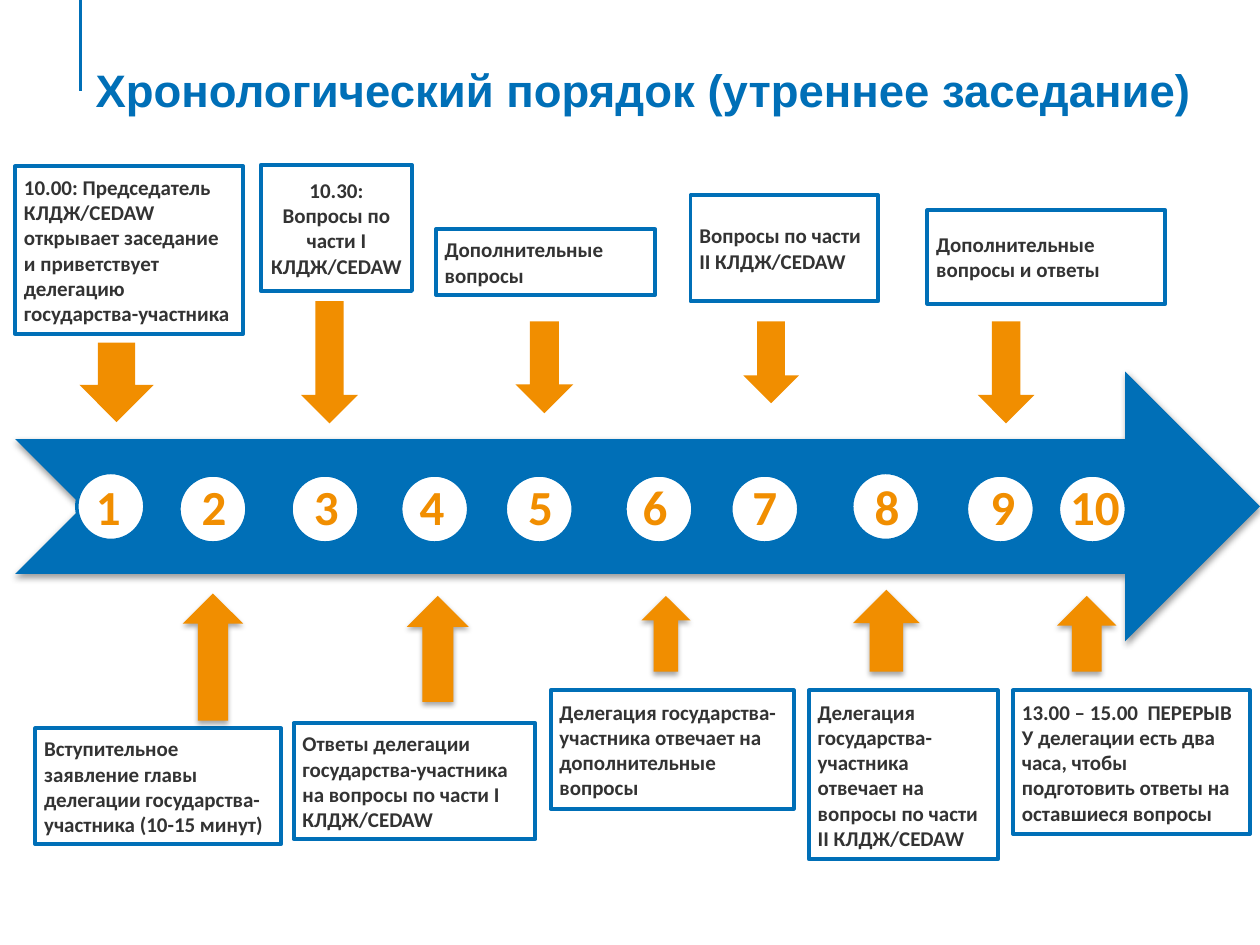
from dataclasses import dataclass

from lxml import etree
from pptx import Presentation
from pptx import util as u
from pptx.dml.color import RGBColor
from pptx.enum import shapes, text
from pptx.oxml import ns


@dataclass(frozen=True)
class Theme:
    """Colours, fonts and type sizes of the slide."""
    blue: str = "006FB7"
    orange: str = "F18E00"
    white: str = "FFFFFF"
    ink: str = "333333"
    head_font: str = "Arial"
    body_font: str = "Calibri"
    title: int = 26
    number: int = 28
    body: int = 12


@dataclass(frozen=True)
class Step:
    """One numbered step: circle, number, arrow, framed note and its words."""
    circle: tuple
    number_x: float
    arrow: tuple
    frame: tuple
    words: tuple
    centred: bool = False


T = Theme()
MSO = shapes.MSO_SHAPE
ALIGN = text.PP_ALIGN
ANCHOR = text.MSO_ANCHOR

STEPS = [
    Step((0.61, 3.75), 0.66, (0.63, 2.72, 0.59, 0.63), (0.12, 1.32, 1.81, 1.33),
         ("10.00: Председатель КЛДЖ/CEDAW открывает заседание и приветствует делегацию государства-участника",)),
    Step((1.42, 3.77), 1.5, (1.45, 4.71, 0.48, 1.01), (0.28, 5.78, 1.95, 0.92),
         ("Вступительное заявление главы делегации государства-участника (10-15 минут)",)),
    Step((2.31, 3.77), 2.39, (2.39, 2.39, 0.45, 0.97), (2.07, 1.31, 1.2, 1),
         ("10.30: Вопросы по части I КЛДЖ/CEDAW",), True),
    Step((3.18, 3.77), 3.23, (3.23, 4.73, 0.49, 0.84), (2.33, 5.74, 1.92, 0.92),
         ("Ответы делегации государства-участника на вопросы по части I КЛДЖ/CEDAW",)),
    Step((4.01, 3.77), 4.09, (4.09, 2.55, 0.46, 0.73), (3.46, 1.82, 1.74, 0.52),
         ("Дополнительные вопросы",)),
    Step((4.96, 3.77), 5, (5.09, 4.73, 0.39, 0.6), (4.37, 5.48, 1.93, 0.94),
         ("Делегация государства-участника отвечает на дополнительные вопросы",)),
    Step((5.8, 3.77), 5.87, (5.9, 2.55, 0.44, 0.65), (5.48, 1.55, 1.49, 0.84),
         ("Вопросы по части II КЛДЖ/CEDAW",)),
    Step((6.76, 3.75), 6.84, (6.77, 4.68, 0.53, 0.65), (6.42, 5.48, 1.5, 1.34),
         ("Делегация государства-участника отвечает на вопросы по части II КЛДЖ/CEDAW",)),
    Step((7.67, 3.77), 7.76, (7.76, 2.55, 0.45, 0.81), (7.36, 1.67, 1.89, 0.74),
         ("Дополнительные вопросы и ответы",)),
    Step((8.4, 3.77), 8.39, (8.39, 4.73, 0.47, 0.6), (8.04, 5.48, 1.88, 1.14),
         ("13.00 – 15.00  ПЕРЕРЫВ",
          "У делегации есть два часа, чтобы подготовить ответы на оставшиеся вопросы")),
]


def inches(box):
    """Turn a tuple of numbers into lengths."""
    return [u.Inches(v) for v in box]


def write(tf, *lines, size=T.body, font=T.body_font, color=T.ink, align=ALIGN.LEFT,
          anchor=ANCHOR.TOP, wrap=True, inset=(0.1, 0.05)):
    """Fill a text frame with bold paragraphs in one format."""
    tf.word_wrap = wrap
    tf.vertical_anchor = anchor
    tf.margin_left = tf.margin_right = u.Inches(inset[0])
    tf.margin_top = tf.margin_bottom = u.Inches(inset[1])
    for i, line in enumerate(lines):
        p = tf.paragraphs[0] if i == 0 else tf.add_paragraph()
        p.alignment = align
        r = p.add_run()
        r.text = line
        r.font.size, r.font.name, r.font.bold = u.Pt(size), font, True
        r.font.color.rgb = RGBColor.from_string(color)


def add_text(s, box, *lines, **fmt):
    """Place a text box and write in it."""
    write(s.shapes.add_textbox(*inches(box)).text_frame, *lines, **fmt)


def add_shape(s, kind, box, fill=None, line=None, width=2.0):
    """Place a preset shape with a plain fill and line."""
    sp = s.shapes.add_shape(kind, *inches(box))
    sp.shadow.inherit = False
    if fill:
        sp.fill.solid()
        sp.fill.fore_color.rgb = RGBColor.from_string(fill)
    else:
        sp.fill.background()
    if line:
        sp.line.color.rgb = RGBColor.from_string(line)
        sp.line.width = u.Pt(width)
    else:
        sp.line.fill.background()
    return sp


def drop_shadow(sp, distance, opacity):
    """Give a shape a soft shadow straight below it."""
    effects = sp.element.spPr.find(ns.qn("a:effectLst"))
    outer = etree.SubElement(effects, ns.qn("a:outerShdw"), blurRad=str(u.Pt(3.1)),
                             dist=str(u.Pt(distance)), dir="5400000", rotWithShape="0")
    color = etree.SubElement(outer, ns.qn("a:srgbClr"), val="000000")
    etree.SubElement(color, ns.qn("a:alpha"), val=str(opacity * 1000))


def add_header(s, box):
    """Draw the title and the rule hanging at its left."""
    x, y = box[:2]
    rule = s.shapes.add_connector(shapes.MSO_CONNECTOR.STRAIGHT, *inches((x - 0.02, 0, x - 0.02, y + 0.28)))
    rule.line.color.rgb = RGBColor.from_string(T.blue)
    rule.line.width = u.Pt(2)
    etree.SubElement(rule.element.spPr, ns.qn("a:effectLst"))
    add_text(s, box, "Хронологический порядок (утреннее заседание)",
             size=T.title, font=T.head_font, color=T.blue, wrap=False)


def add_timeline(s, box):
    """Draw the wide arrow with its numbered circles."""
    drop_shadow(add_shape(s, MSO.NOTCHED_RIGHT_ARROW, box, T.blue), 1.6, 38)
    for n, step in enumerate(STEPS, 1):
        add_shape(s, MSO.OVAL, (*step.circle, 0.54, 0.54), T.white, T.blue)
        add_text(s, (step.number_x, box[1] + 0.78, 0.4 if n < 10 else 0.6, 0.57), str(n),
                 size=T.number, color=T.orange, align=ALIGN.CENTER, wrap=False)


def add_note(s, step, timeline):
    """Draw the framed wording of one step and its pointer."""
    above = step.arrow[1] < timeline[1]
    frame = add_shape(s, MSO.RECTANGLE, step.frame, line=T.blue, width=2.25)
    write(frame.text_frame, *step.words, align=ALIGN.CENTER if step.centred else ALIGN.LEFT,
          anchor=ANCHOR.MIDDLE, inset=(0.07, 0.02))
    pointer = add_shape(s, MSO.DOWN_ARROW if above else MSO.UP_ARROW, step.arrow, T.orange)
    if not above:
        drop_shadow(pointer, 1.8, 35)


def main():
    """Build the slide and save it."""
    prs = Presentation()
    prs.slide_width, prs.slide_height = inches((10, 7.5))
    s = prs.slides.add_slide(prs.slide_layouts[6])
    timeline = (0.12, 2.95, 9.88, 2.14)
    add_header(s, (0.66, 0.44, 8.99, 0.79))
    add_timeline(s, timeline)
    for step in STEPS:
        add_note(s, step, timeline)
    prs.save("out.pptx")


if __name__ == "__main__":
    main()
